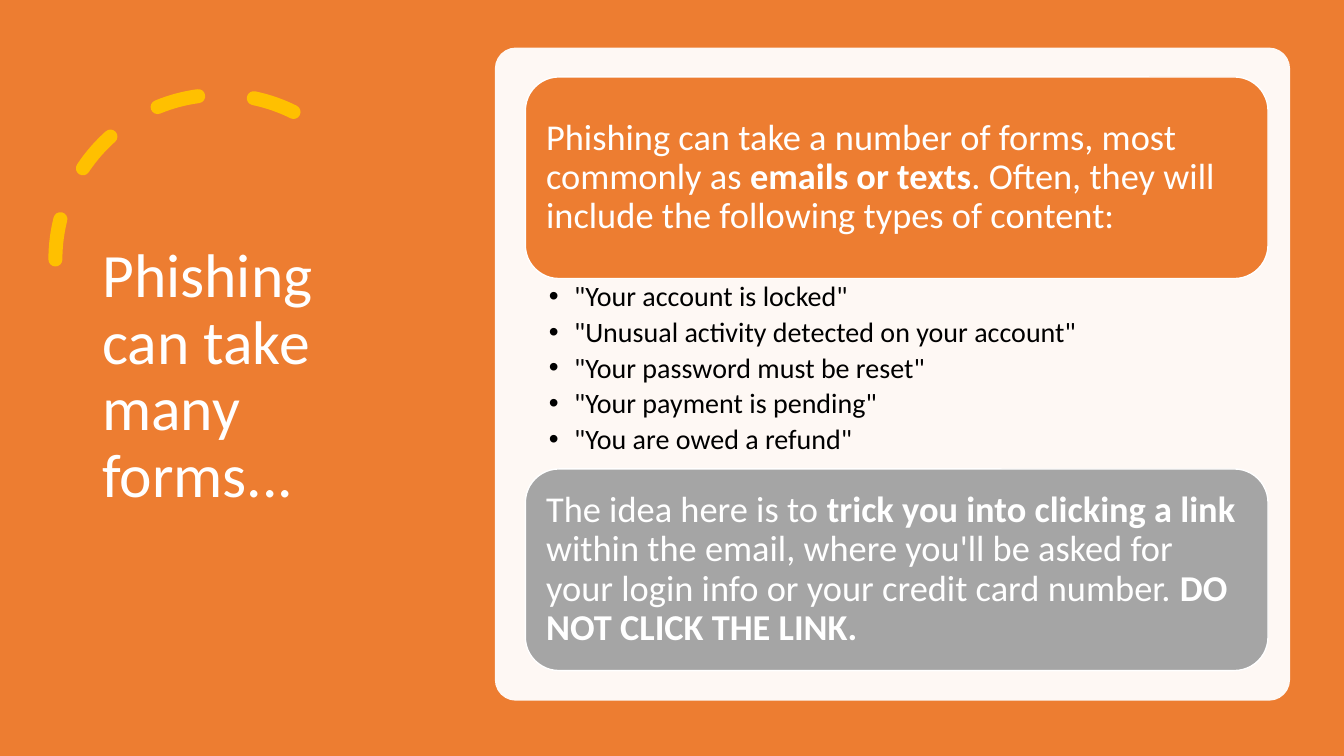
from dataclasses import dataclass

from lxml import etree
from pptx import Presentation
from pptx.dml.color import RGBColor
from pptx.enum.dml import MSO_LINE
from pptx.enum.shapes import MSO_SHAPE
from pptx.enum.text import MSO_ANCHOR, PP_ALIGN
from pptx.oxml.ns import qn
from pptx.util import Pt

RECTANGLE, ROUNDED, ARC = MSO_SHAPE.RECTANGLE, MSO_SHAPE.ROUNDED_RECTANGLE, MSO_SHAPE.ARC
TOP, MIDDLE = MSO_ANCHOR.TOP, MSO_ANCHOR.MIDDLE
LEFT = PP_ALIGN.LEFT
DASH = MSO_LINE.DASH

TITLE = "Phishing can take many forms..."
# Each run is (text, bold).
INTRODUCTION = [
    ("Phishing can take a number of forms, most commonly as ", False),
    ("emails or texts", True),
    (". Often, they will include the following types of content:", False),
]
EXAMPLES = [
    '"Your account is locked"',
    '"Unusual activity detected on your account"',
    '"Your password must be reset"',
    '"Your payment is pending"',
    '"You are owed a refund"',
]
WARNING = [
    ("The idea here is to", False),
    (" trick you into clicking a link", True),
    (" within the email, where you'll be asked for your login info or your credit card number. ", False),
    ("DO NOT CLICK THE LINK.", True),
]


@dataclass(frozen=True)
class Theme:
    font: str = "Calibri"
    orange: str = "ED7D31"
    gold: str = "FFC000"
    gray: str = "A5A5A5"
    white: str = "FFFFFF"
    black: str = "000000"
    title_size: int = 44
    card_size: int = 26
    bullet_size: int = 20


THEME = Theme()

# Lengths in points
SLIDE_WIDTH, SLIDE_HEIGHT = 960, 540
TITLE_BOX = (66, 50.4, 232.6, 438.5)
ARC_BOX = (39.6, 67.7, 235.4, 235.4)
PANEL_BOX = (353.5, 34, 568, 466.5)
CARD_LEFT, CARD_WIDTH, CARD_HEIGHT = 375.25, 530.5, 144
CARDS_TOP, LIST_HEIGHT = 55, 136
BULLET_INDENT = 18


def add_filled_shape(slide, kind, box, color, outline=None):
    shape = slide.shapes.add_shape(kind, *map(Pt, box))
    shape.shadow.inherit = False
    shape.fill.solid()
    shape.fill.fore_color.rgb = RGBColor.from_string(color)
    if outline:
        shape.line.color.rgb = RGBColor.from_string(outline)
        shape.line.width = Pt(1)
    else:
        shape.line.fill.background()
    return shape


def set_text(shape, paragraphs, size, color, anchor, insets, space_after=0):
    """Write paragraphs of (text, bold) runs; insets are left, top, right, bottom."""
    frame = shape.text_frame
    frame.word_wrap = True
    frame.vertical_anchor = anchor
    frame.margin_left, frame.margin_top, frame.margin_right, frame.margin_bottom = map(Pt, insets)
    for index, runs in enumerate(paragraphs):
        paragraph = frame.add_paragraph() if index else frame.paragraphs[0]
        paragraph.alignment = LEFT
        paragraph.line_spacing = 0.9
        paragraph.space_after = Pt(space_after)
        for text, bold in runs:
            run = paragraph.add_run()
            run.text = text
            run.font.name = THEME.font
            run.font.size = Pt(size)
            run.font.bold = bold
            run.font.color.rgb = RGBColor.from_string(color)


def add_bullet(paragraph):
    properties = paragraph._p.get_or_add_pPr()
    properties.set("marL", str(Pt(BULLET_INDENT)))
    properties.set("indent", str(-Pt(BULLET_INDENT)))
    etree.SubElement(properties, qn("a:buFont")).set("typeface", "Arial")
    etree.SubElement(properties, qn("a:buChar")).set("char", "•")


def add_dashed_arc(slide):
    arc = slide.shapes.add_shape(ARC, *map(Pt, ARC_BOX))
    arc.shadow.inherit = False
    arc.adjustments[0] = 146.13
    arc.adjustments[1] = 0
    arc.fill.background()
    arc.line.color.rgb = RGBColor.from_string(THEME.gold)
    arc.line.width = Pt(10)
    arc.line.dash_style = DASH
    properties = arc._element.spPr
    properties.find(qn("a:ln")).set("cap", "rnd")
    properties.find(qn("a:xfrm")).set("flipH", "1")


def add_title(slide):
    title = slide.shapes.add_textbox(*map(Pt, TITLE_BOX))
    set_text(title, [[(TITLE, False)]], THEME.title_size, THEME.white, MIDDLE, (7.2, 3.6, 7.2, 3.6))


def add_panel(slide):
    panel = add_filled_shape(slide, ROUNDED, PANEL_BOX, THEME.white)
    panel.adjustments[0] = 0.032
    color = panel._element.spPr.find(qn("a:solidFill"))[0]
    etree.SubElement(color, qn("a:alpha")).set("val", "95000")


def add_card(slide, top, runs, color):
    box = (CARD_LEFT, top, CARD_WIDTH, CARD_HEIGHT)
    card = add_filled_shape(slide, ROUNDED, box, color, THEME.white)
    set_text(card, [runs], THEME.card_size, THEME.white, MIDDLE, (7.8, 7.8, 7.8, 7.8))


def add_examples(slide, top):
    box = slide.shapes.add_textbox(*map(Pt, (CARD_LEFT, top, CARD_WIDTH, LIST_HEIGHT)))
    paragraphs = [[(example, False)] for example in EXAMPLES]
    set_text(box, paragraphs, THEME.bullet_size, THEME.black, TOP, (16.8, 2.6, 14.4, 2.6), space_after=4)
    for paragraph in box.text_frame.paragraphs:
        add_bullet(paragraph)


def main():
    presentation = Presentation()
    presentation.slide_width, presentation.slide_height = Pt(SLIDE_WIDTH), Pt(SLIDE_HEIGHT)
    slide = presentation.slides.add_slide(presentation.slide_layouts[6])

    add_filled_shape(slide, RECTANGLE, (0, 0, SLIDE_WIDTH, SLIDE_HEIGHT), THEME.orange)
    add_dashed_arc(slide)
    add_title(slide)
    add_panel(slide)

    list_top = CARDS_TOP + CARD_HEIGHT
    add_card(slide, CARDS_TOP, INTRODUCTION, THEME.orange)
    add_examples(slide, list_top)
    add_card(slide, list_top + LIST_HEIGHT, WARNING, THEME.gray)

    presentation.save("out.pptx")


if __name__ == "__main__":
    main()
